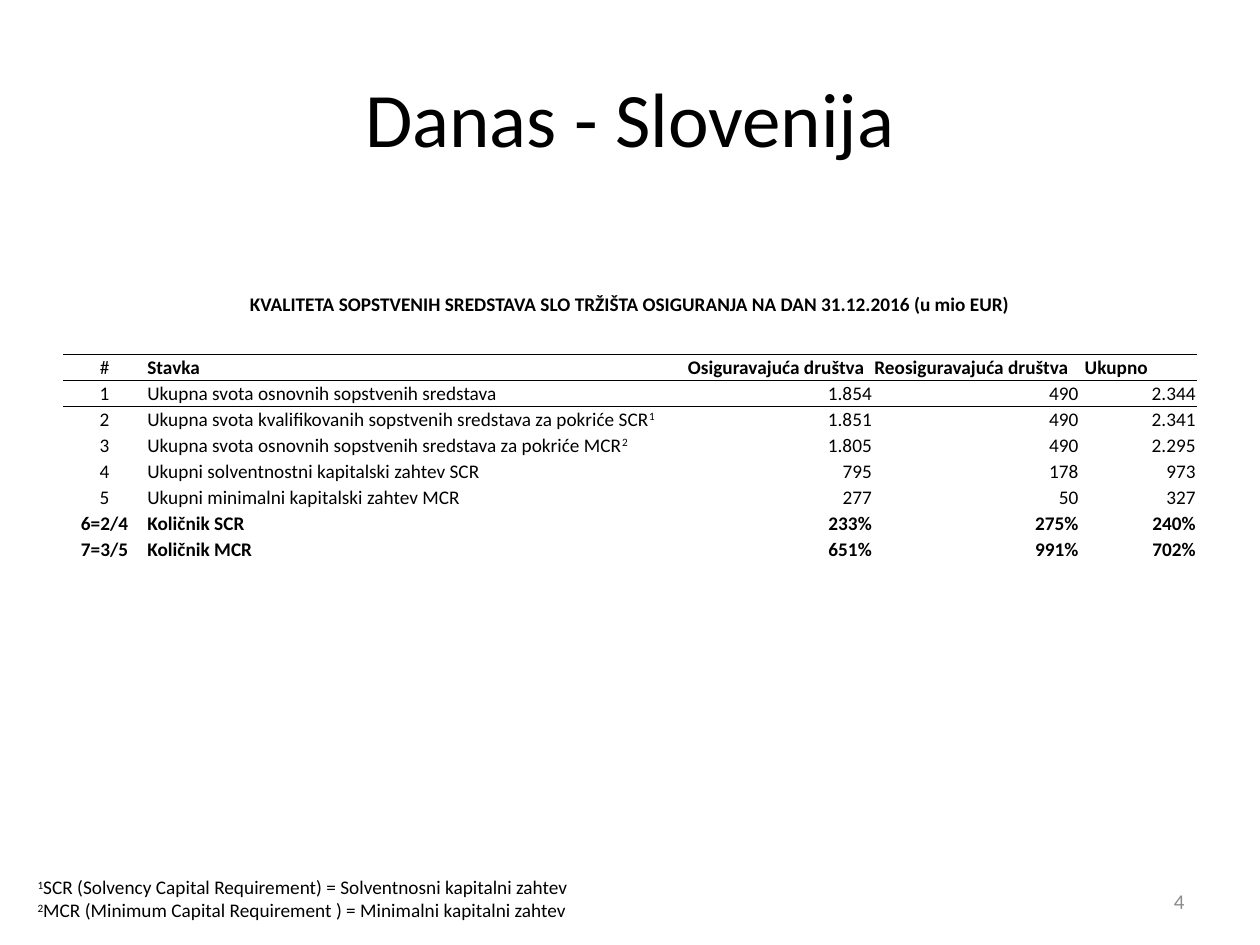
from pptx import Presentation
from pptx.dml.color import RGBColor
from pptx.enum.text import MSO_ANCHOR as Anchor, PP_ALIGN as Align
from pptx.oxml import parse_xml
from pptx.oxml.ns import nsdecls, qn
from pptx.util import Inches, Pt

BLACK = RGBColor(0x00, 0x00, 0x00)
GRAY = RGBColor(0x8C, 0x8C, 0x8C)
FONT = "Calibri"
PLAIN_STYLE = "{2D5ABB26-0587-4C30-8999-92F81FD0307C}"

CAPTION = "KVALITETA SOPSTVENIH SREDSTAVA SLO TRŽIŠTA OSIGURANJA NA DAN 31.12.2016 (u mio EUR)"
HEADINGS = ["#", "Stavka", "Osiguravajuća društva", "Reosiguravajuća društva", "Ukupno"]
# A caret raises the character that follows it
ITEMS = [
    ["1", "Ukupna svota osnovnih sopstvenih sredstava", "1.854", "490", "2.344"],
    ["2", "Ukupna svota kvalifikovanih sopstvenih sredstava za pokriće SCR^1", "1.851", "490", "2.341"],
    ["3", "Ukupna svota osnovnih sopstvenih sredstava za pokriće MCR^2", "1.805", "490", "2.295"],
    ["4", "Ukupni solventnostni kapitalski zahtev SCR", "795", "178", "973"],
    ["5", "Ukupni minimalni kapitalski zahtev MCR", "277", "50", "327"],
    ["6=2/4", "Količnik SCR", "233%", "275%", "240%"],
    ["7=3/5", "Količnik MCR", "651%", "991%", "702%"],
]
FOOTNOTES = [
    "^1SCR (Solvency Capital Requirement) = Solventnosni kapitalni zahtev",
    "^2MCR (Minimum Capital Requirement ) = Minimalni kapitalni zahtev",
]
COLUMN_WIDTHS = [0.66, 4.29, 1.48, 1.64, 0.93]
CAPTION_HEIGHT = 0.79


def write(para, text, size=11, color=BLACK, bold=False, align=Align.LEFT):
    para.alignment = align
    plain, *raised = text.split("^")
    parts = [(plain, False)]
    for part in raised:
        parts += [(part[0], True), (part[1:], False)]
    for words, is_raised in parts:
        if not words:
            continue
        span = para.add_run()
        span.text = words
        span.font.name = FONT
        span.font.size = Pt(size)
        span.font.bold = bold
        span.font.color.rgb = color
        if is_raised:
            span.font._element.set("baseline", "30000")


def add_text(page, box, lines, anchor=Anchor.MIDDLE, **text_format):
    frame = page.shapes.add_textbox(*map(Inches, box)).text_frame
    frame.word_wrap = True
    frame.vertical_anchor = anchor
    for index, line in enumerate(lines):
        para = frame.paragraphs[0] if index == 0 else frame.add_paragraph()
        write(para, line, **text_format)


def add_borders(cell, sides):
    properties = cell._tc.get_or_add_tcPr()
    for position, side in enumerate(sides):
        properties.insert(position, parse_xml(
            f'<a:ln{side} {nsdecls("a")} w="6350"><a:solidFill>'
            f'<a:srgbClr val="{BLACK}"/></a:solidFill></a:ln{side}>'))


def fill_cell(cell, text, anchor=Anchor.BOTTOM, borders="", **text_format):
    cell.margin_left = cell.margin_right = cell.margin_top = Inches(0.01)
    cell.margin_bottom = 0
    cell.vertical_anchor = anchor
    cell.fill.background()
    add_borders(cell, borders)
    write(cell.text_frame.paragraphs[0], text, **text_format)


def add_funds_table(page, box):
    row_count = len(ITEMS) + 2
    table = page.shapes.add_table(row_count, len(HEADINGS), *map(Inches, box)).table
    table.first_row = table.horz_banding = False
    table._tbl.tblPr.find(qn("a:tableStyleId")).text = PLAIN_STYLE
    for column, width in zip(table.columns, COLUMN_WIDTHS):
        column.width = Inches(width)
    for row in table.rows:
        row.height = Inches((box[3] - CAPTION_HEIGHT) / (row_count - 1))
    table.rows[0].height = Inches(CAPTION_HEIGHT)

    # Caption across all columns
    table.cell(0, 0).merge(table.cell(0, len(HEADINGS) - 1))
    fill_cell(table.cell(0, 0), CAPTION, anchor=Anchor.MIDDLE, bold=True, align=Align.CENTER)
    for column in range(len(HEADINGS)):
        add_borders(table.cell(0, column), "B")

    # Headings between two rules
    for column, heading in enumerate(HEADINGS):
        fill_cell(table.cell(1, column), heading, borders="TB", bold=column > 0,
                  align=Align.LEFT if column else Align.CENTER)
    table.cell(1, len(HEADINGS) - 1).margin_left = Inches(0.04)

    # Items, with the ratios in bold
    aligns = [Align.CENTER, Align.LEFT] + [Align.RIGHT] * 3
    for row, item in enumerate(ITEMS, start=2):
        for column, (text, align) in enumerate(zip(item, aligns)):
            fill_cell(table.cell(row, column), text, borders="T" if row == 2 else "",
                      bold="=" in item[0], align=align)


def main():
    deck = Presentation()
    deck.slide_width, deck.slide_height = Inches(10), Inches(7.5)
    page = deck.slides.add_slide(deck.slide_layouts[6])

    # Title
    add_text(page, (0.5, 0.3, 9, 1.25), ["Danas - Slovenija"], size=44, align=Align.CENTER)
    # Table
    add_funds_table(page, (0.5, 2.02, 9, 2.44))
    # Page number and footnotes
    add_text(page, (7.17, 6.95, 2.33, 0.4), ["4"], size=12, color=GRAY, align=Align.RIGHT)
    add_text(page, (0.2, 6.9, 7.8, 0.47), FOOTNOTES, anchor=Anchor.TOP)

    deck.save("out.pptx")


if __name__ == "__main__":
    main()
